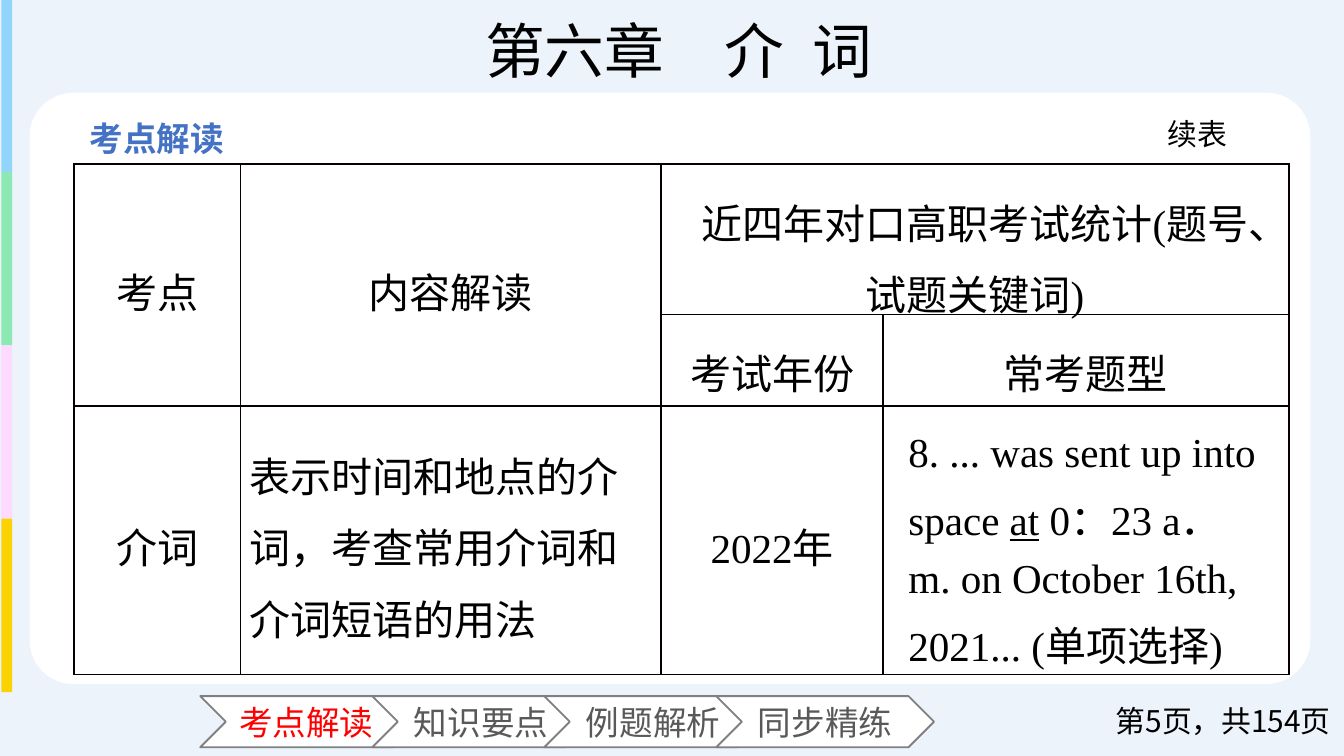
"""Build the exam-point slide on prepositions."""
import pptx
import pptx.util
import pptx.dml.color
import pptx.enum.shapes
import pptx.enum.text
import pptx.oxml
import pptx.oxml.ns

Inches = pptx.util.Inches
Pt = pptx.util.Pt
Form = pptx.enum.shapes.MSO_SHAPE
Align = pptx.enum.text.PP_ALIGN
Mid = pptx.enum.text.MSO_ANCHOR.MIDDLE
SANS = "Noto Sans CJK SC"
SERIF = "Times New Roman"
HUES = {
    "back": "ECF3FB", "card": "FFFFFF", "sky": "91D5FD", "mint": "8CE9B4",
    "pink": "FEDAFE", "gold": "FBD302", "blue": "4472C4", "red": "FF0000",
    "gray": "595959", "edge": "808080", "ink": "000000", "rule": "080000",
}


def write(frame, *parts, size=18, font=SANS, hue="ink", bold=None, align=None, lead=None):
    frame.word_wrap = True
    para = frame.paragraphs[0]
    para.alignment = align
    para.line_spacing = lead
    runs = []
    for part in parts:
        run = para.add_run()
        run.text = part
        run.font.size = Pt(size)
        run.font.name = font
        run.font.bold = bold
        run.font.color.rgb = pptx.dml.color.RGBColor.from_string(HUES[hue])
        east = pptx.oxml.parse_xml(f'<a:ea {pptx.oxml.ns.nsdecls("a")} typeface="{SANS}"/>')
        run.font._element.find(pptx.oxml.ns.qn("a:latin")).addnext(east)
        runs.append(run)
    return runs


def draw(form, box, hue, edge=None):
    shape = slide.shapes.add_shape(form, *map(Inches, box))
    shape.shadow.inherit = False
    shape.fill.solid()
    shape.fill.fore_color.rgb = pptx.dml.color.RGBColor.from_string(HUES[hue])
    if edge:
        shape.line.color.rgb = pptx.dml.color.RGBColor.from_string(HUES[edge])
        shape.line.width = Pt(1)
    else:
        shape.line.fill.background()
    return shape


deck = pptx.Presentation()
deck.slide_width = Inches(10)
deck.slide_height = Inches(10) * 9 // 16
slide = deck.slides.add_slide(deck.slide_layouts[6])

back = draw(Form.RECTANGLE, (0, 0, 10, 5.62), "back")
back.height = deck.slide_height
for i, hue in enumerate(("sky", "mint", "pink", "gold")):
    draw(Form.RECTANGLE, (0.01, -0.01 + 1.29 * i, 0.08, 1.29), hue)
card = draw(Form.ROUNDED_RECTANGLE, (0.22, 0.69, 9.53, 4.4), "card")
card.adjustments[0] = 0.074

for i, label in enumerate(("考点解读", "知识要点", "例题解析", "同步精练")):
    step = draw(Form.CHEVRON, (1.49 + 1.28 * i, 5.18, 1.62, 0.38), "card", "edge")
    step.text_frame.vertical_anchor = Mid
    write(step.text_frame, label, hue="gray" if i else "red",
          align=Align.CENTER if i else Align.JUSTIFY)

frames = []
for box in ((0.57, 0.83, 1.8, 0.4), (1.76, 0.05, 6.58, 0.64),
            (7.97, 5.21, 2.03, 0.3), (8.59, 0.81, 0.77, 0.27)):
    frames.append(slide.shapes.add_textbox(*map(Inches, box)).text_frame)
head, title, page, note = frames
write(head, "考点解读", hue="blue", bold=True)
runs = write(title, "第六章　介", " ", "词", size=32, font=SERIF, align=Align.CENTER)
runs[1].font._element.set("spc", "800")
page.vertical_anchor = Mid
write(page, "第5页，共154页", size=16, align=Align.RIGHT)
write(note, "续表", size=16)

grid = slide.shapes.add_table(3, 4, *map(Inches, (0.55, 1.22, 9.03, 3.79))).table
grid.first_row = grid.horz_banding = False
for col, width in zip(grid.columns, (1.24, 3.13, 1.65, 3.02)):
    col.width = Inches(width)
for row, height in zip(grid.rows, (1.12, 0.48, 1.99)):
    row.height = Inches(height)
for cell in grid.iter_cells():
    props = cell._tc.get_or_add_tcPr()
    for side in "LRTB":
        props.append(pptx.oxml.parse_xml(
            f'<a:ln{side} {pptx.oxml.ns.nsdecls("a")} w="12700"><a:solidFill>'
            f'<a:srgbClr val="{HUES["rule"]}"/></a:solidFill></a:ln{side}>'))
    cell.fill.background()
grid.cell(0, 0).merge(grid.cell(1, 0))
grid.cell(0, 1).merge(grid.cell(1, 1))
grid.cell(0, 2).merge(grid.cell(0, 3))

cells = {
    (0, 0): ["考点"],
    (0, 1): ["内容解读"],
    (0, 2): ["近四年对口高职考试统计(题号、试题关键词)"],
    (1, 2): ["考试年份"],
    (1, 3): ["常考题型"],
    (2, 0): ["介词"],
    (2, 1): ["表示时间和地点的介词，考查常用介词和介词短语的用法"],
    (2, 2): ["2022年"],
    (2, 3): ["8. ... was sent up into space ", "at",
             " 0：23 a．m. on October 16th, 2021... (单项选择)"],
}
for (r, c), parts in cells.items():
    cell = grid.cell(r, c)
    tight = r == 2 and c < 2
    cell.vertical_anchor = Mid
    cell.margin_left = cell.margin_right = Inches(0.07 if tight else 0.19)
    cell.margin_top = cell.margin_bottom = Inches(0 if tight else 0.12)
    left = r == 2 and c in (1, 3)
    runs = write(cell.text_frame, *parts, size=22, font=SERIF, lead=1.2,
                 align=Align.LEFT if left else Align.CENTER)
    if len(runs) > 1:
        runs[1].font.underline = True

deck.save("out.pptx")
